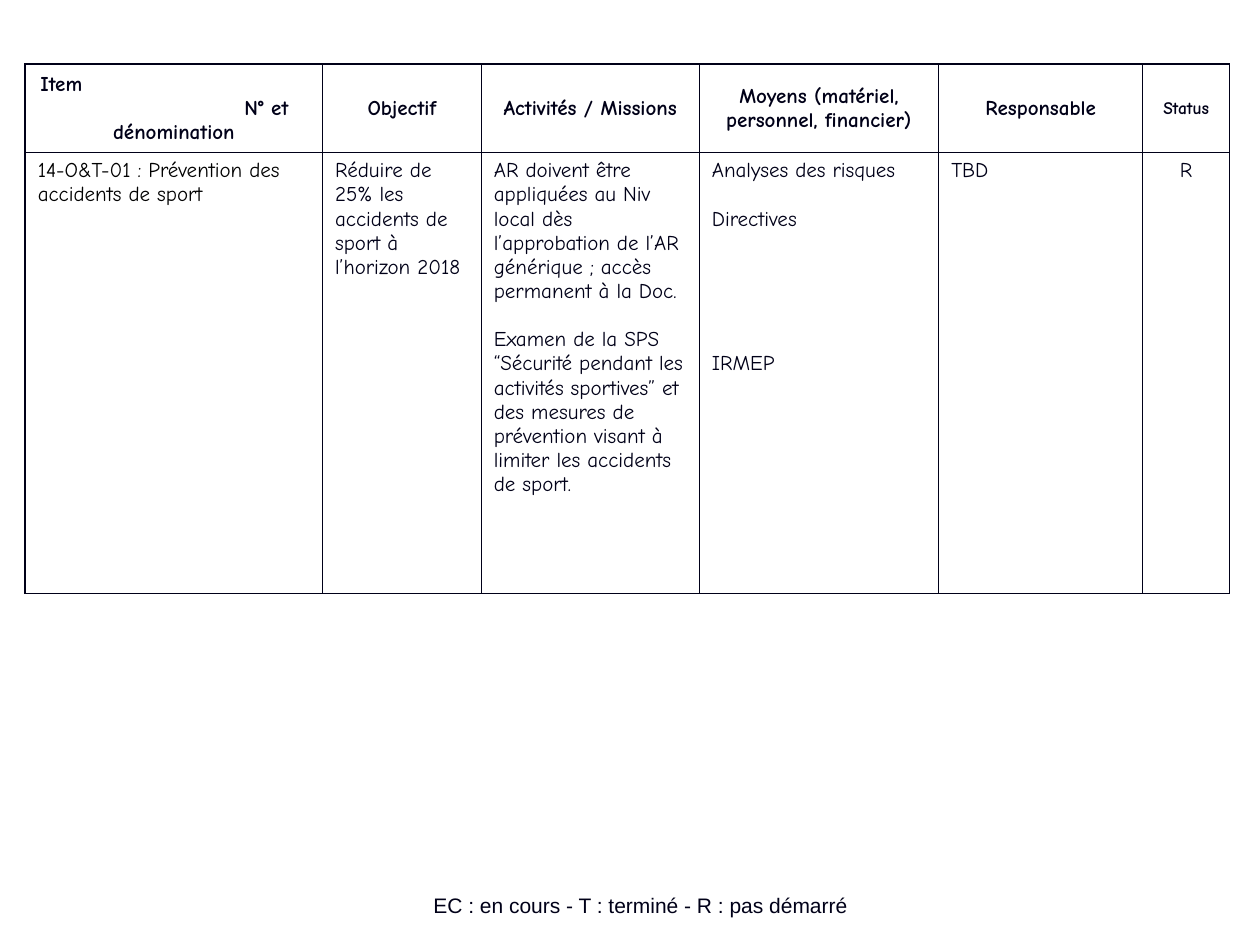
from lxml import etree
from pptx import Presentation
from pptx import util as u
from pptx.dml.color import RGBColor
from pptx.enum import text
from pptx.oxml import ns

INK = RGBColor(0x00, 0x00, 0x18)
BLACK = RGBColor(0x00, 0x00, 0x00)
TABLE_FONT = "Comic Neue"
LEGEND_FONT = "Arial"
LINE = 13.8  # height of one 12 pt table line, in points
CENTER = text.PP_ALIGN.CENTER
LEFT = text.PP_ALIGN.LEFT

COLUMN_WIDTHS = [2.36, 1.26, 1.73, 1.9, 1.62, 0.69]
ROW_HEIGHTS = [0.66, 3.5]

# Each cell is a list of (wording, format) paragraphs.
HEADINGS = [
    [("Item", dict(align=LEFT, indent=0.02)),
     ("N° et", dict(align=LEFT, indent=1.64)),
     ("dénomination", {})],
    [("Objectif", {})],
    [("Activités / Missions", {})],
    [("Moyens (matériel, personnel, financier)", {})],
    [("Responsable", {})],
    [("Status", dict(size=10))],
]
ACTION = [
    [("14-O&T-01 : Prévention des accidents de sport", dict(color=BLACK))],
    [("Réduire de 25% les accidents de sport à l’horizon 2018", {})],
    [("AR doivent être appliquées au Niv local dès l’approbation de l’AR "
      "générique ; accès permanent à la Doc.", {}),
     ("Examen de la SPS “Sécurité pendant les activités sportives” et des "
      "mesures de prévention visant à limiter les accidents de sport.",
      dict(before=LINE))],
    [("Analyses des risques", {}),
     ("Directives", dict(before=LINE)),
     ("IRMEP", dict(before=5 * LINE))],
    [("TBD", {})],
    [("R", dict(align=CENTER))],
]


def write(paragraph, wording, font=TABLE_FONT, size=12, color=INK, bold=False,
          align=LEFT, indent=0, before=0):
    if indent:
        paragraph._p.get_or_add_pPr().set("marL", str(u.Inches(indent)))
    paragraph.alignment = align
    if before:
        paragraph.space_before = u.Pt(before)
    run = paragraph.add_run()
    run.text = wording
    run.font.name = font
    run.font.size = u.Pt(size)
    run.font.bold = bold
    run.font.color.rgb = color


def draw_borders(cell, color=INK, width=1):
    properties = cell._tc.get_or_add_tcPr()
    for position, side in enumerate(("lnL", "lnR", "lnT", "lnB")):
        line = etree.Element(ns.qn(f"a:{side}"), w=str(u.Pt(width)))
        fill = etree.SubElement(line, ns.qn("a:solidFill"))
        etree.SubElement(fill, ns.qn("a:srgbClr"), val=str(color))
        properties.insert(position, line)


class SlideBuilder:
    def __init__(self, slide, font_color=INK):
        self.slide = slide
        self.font_color = font_color

    def text_box(self, wording, left, top, width, height, **style):
        frame = self.slide.shapes.add_textbox(
            *map(u.Inches, (left, top, width, height))).text_frame
        frame.word_wrap = True
        frame.vertical_anchor = text.MSO_ANCHOR.BOTTOM
        write(frame.paragraphs[0], wording, color=self.font_color, **style)

    def table(self, left, top, widths, heights, rows):
        """Add a grid; rows holds (cells, anchor, default format) per row."""
        grid = self.slide.shapes.add_table(
            len(heights), len(widths),
            *map(u.Inches, (left, top, sum(widths), sum(heights)))).table
        grid.first_row = grid.horz_banding = False
        for column, width in zip(grid.columns, widths):
            column.width = u.Inches(width)
        for row, height, (cells, anchor, style) in zip(grid.rows, heights, rows):
            row.height = u.Inches(height)
            for cell, paragraphs in zip(row.cells, cells):
                self.fill_cell(cell, paragraphs, anchor, style)

    def fill_cell(self, cell, paragraphs, anchor, style):
        cell.fill.background()
        cell.vertical_anchor = anchor
        draw_borders(cell)
        frame = cell.text_frame
        for number, (wording, extra) in enumerate(paragraphs):
            paragraph = frame.add_paragraph() if number else frame.paragraphs[0]
            write(paragraph, wording,
                  **{"color": self.font_color, **style, **extra})


def main():
    deck = Presentation()
    deck.slide_width, deck.slide_height = u.Inches(10), u.Inches(7.5)
    builder = SlideBuilder(deck.slides.add_slide(deck.slide_layouts[6]))
    builder.text_box("EC : en cours - T : terminé - R : pas démarré",
                     2.33, 6.83, 5.51, 0.5, font=LEGEND_FONT, align=CENTER)
    builder.table(0.2, 0.51, COLUMN_WIDTHS, ROW_HEIGHTS, [
        (HEADINGS, text.MSO_ANCHOR.MIDDLE, dict(bold=True, align=CENTER)),
        (ACTION, text.MSO_ANCHOR.TOP, {}),
    ])
    deck.save("out.pptx")


if __name__ == "__main__":
    main()
